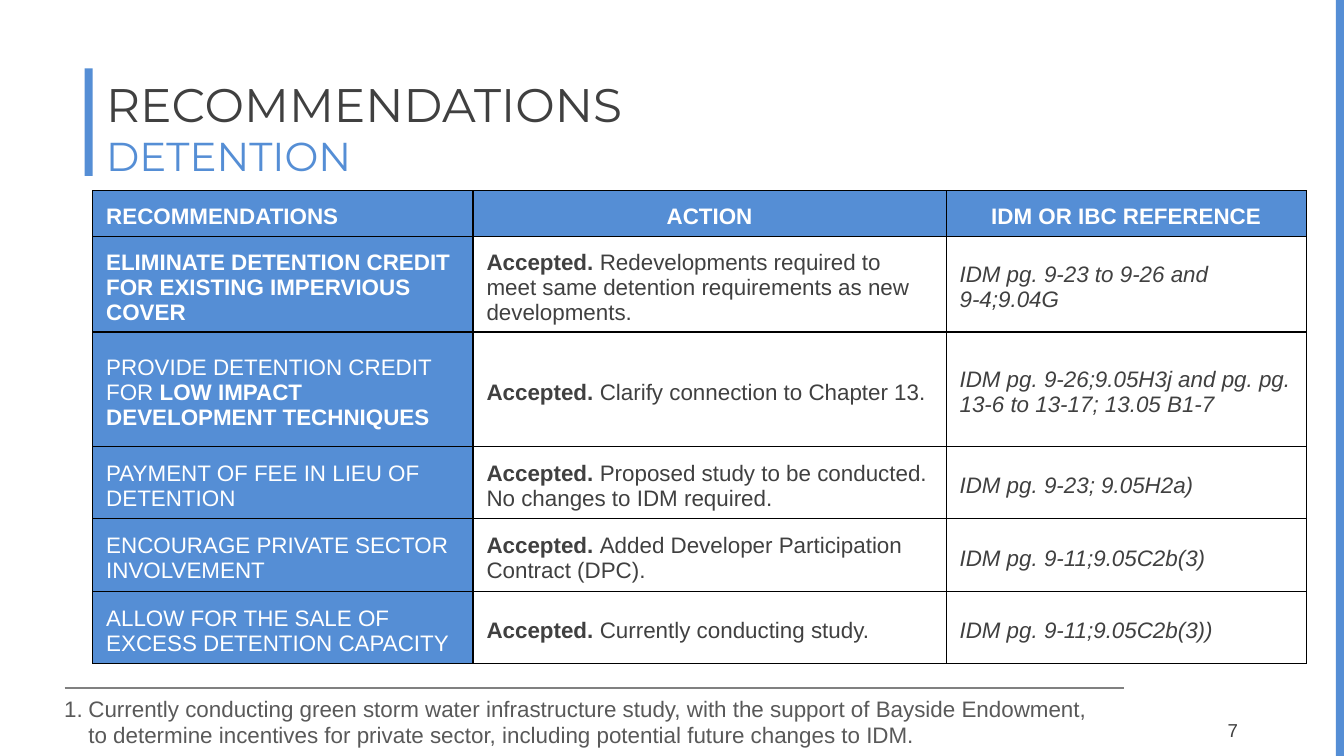
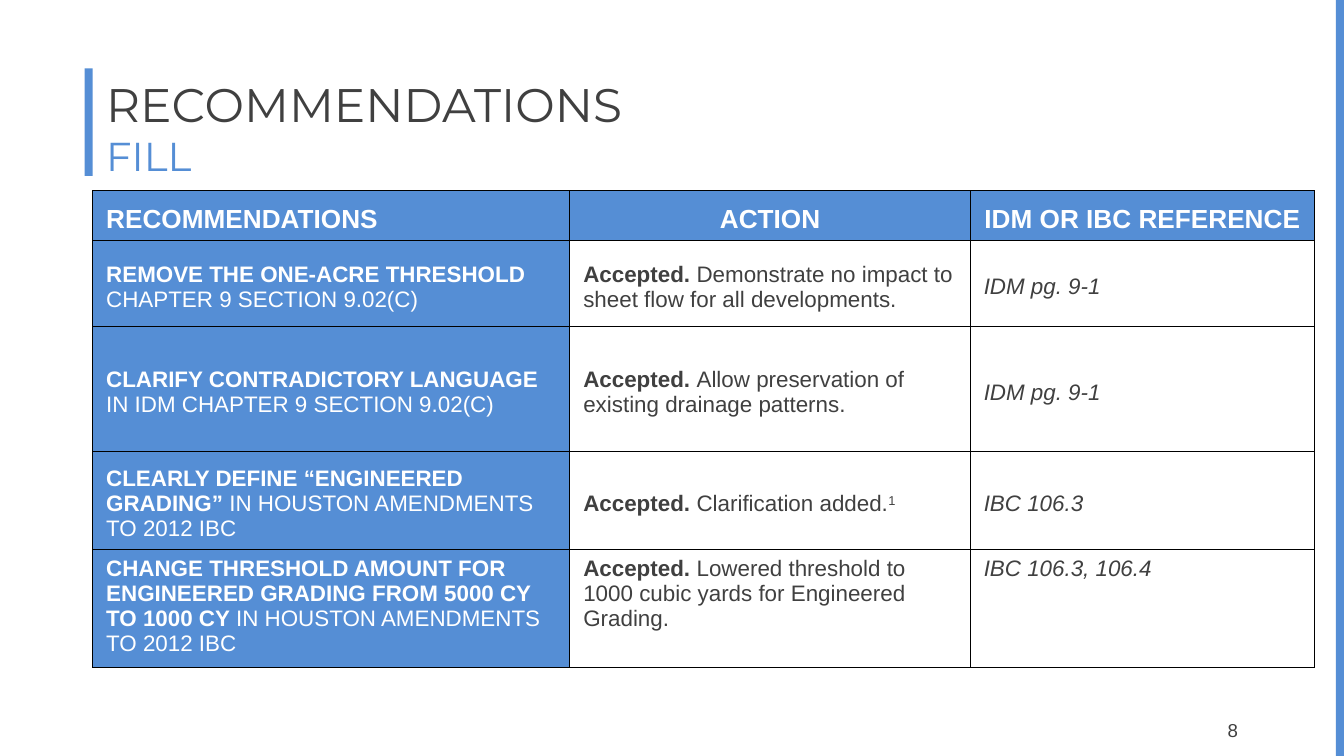
from lxml.etree import SubElement
from pptx import Presentation
from pptx.dml.color import RGBColor
from pptx.enum.shapes import MSO_CONNECTOR, MSO_SHAPE
from pptx.enum.text import MSO_ANCHOR, MSO_AUTO_SIZE, PP_ALIGN
from pptx.oxml import parse_xml
from pptx.oxml.ns import nsdecls, qn
from pptx.util import Inches, Pt

HUES = {"blue": "558ED5", "dark": "404040", "note": "595959",
        "rule": "808080", "white": "FFFFFF", "black": "000000"}
WIDE = 10
HIGH = WIDE * 9 / 16
HEADS = ("RECOMMENDATIONS", "ACTION", "IDM OR IBC REFERENCE")
STEM = "*Accepted. *"

# In the texts, * switches bold, ^ switches superscript,
# \n starts a paragraph and \v breaks a line.
SLIDES = [
    {
        "topic": "DETENTION", "page": 7, "head": 12, "top": (),
        "cols": (2.83, 3.52, 2.68),
        "rows": (0.34, 0.66, 0.85, 0.54, 0.54, 0.54),
        "body": [
            ("*ELIMINATE DETENTION CREDIT FOR EXISTING IMPERVIOUS COVER*",
             "Redevelopments required to meet same detention requirements "
             "as new developments.",
             "IDM pg. 9-23 to 9-26 and \v9-4;9.04G"),
            ("PROVIDE DETENTION CREDIT FOR* LOW IMPACT DEVELOPMENT TECHNIQUES*",
             "Clarify connection to Chapter 13.",
             "IDM pg. 9-26;9.05H3j and pg. pg. 13-6 to 13-17; 13.05 B1-7"),
            ("PAYMENT OF FEE IN LIEU OF DETENTION",
             "Proposed study to be conducted.\nNo changes to IDM required.",
             "IDM pg. 9-23; 9.05H2a)"),
            ("ENCOURAGE PRIVATE SECTOR INVOLVEMENT",
             "Added Developer Participation Contract (DPC).",
             "IDM pg. 9-11;9.05C2b(3)"),
            ("ALLOW FOR THE SALE OF EXCESS DETENTION CAPACITY",
             "Currently conducting study.",
             "IDM pg. 9-11;9.05C2b(3))"),
        ],
        "note": "Currently conducting green storm water infrastructure study, "
                "with the support of Bayside Endowment, \vto determine "
                "incentives for private sector, including potential future "
                "changes to IDM.",
    },
    {
        "topic": "FILL", "page": 8, "head": 14, "top": (4,),
        "cols": (3.55, 2.98, 2.56),
        "rows": (0.37, 0.64, 0.93, 0.73, 0.88),
        "body": [
            ("*REMOVE THE ONE-ACRE THRESHOLD *CHAPTER 9 SECTION 9.02(C)",
             "Demonstrate no impact to sheet flow for all developments.",
             "IDM pg. 9-1"),
            ("*CLARIFY CONTRADICTORY LANGUAGE *IN IDM CHAPTER 9 SECTION 9.02(C)",
             "Allow preservation of existing drainage patterns.",
             "IDM pg. 9-1"),
            ("*CLEARLY DEFINE “ENGINEERED GRADING” *IN HOUSTON AMENDMENTS "
             "TO 2012 IBC",
             "Clarification added.^1^",
             "IBC 106.3"),
            ("*CHANGE THRESHOLD AMOUNT FOR ENGINEERED GRADING FROM 5000 CY "
             "TO 1000 CY *IN HOUSTON AMENDMENTS TO 2012 IBC",
             "Lowered threshold to 1000 cubic yards for Engineered Grading.",
             "IBC 106.3, 106.4"),
        ],
        "note": None,
    },
]


def hue(name):
    return RGBColor.from_string(HUES[name])


def box(*at):
    return [Inches(n) for n in at]


def assign(obj, **vals):
    for key, val in vals.items():
        setattr(obj, key, val)


def add_run(para, text, size, tint, font="Arial", bold=False, slant=False):
    run = para.add_run()
    run.text = text
    assign(run.font, name=font, size=Pt(size), bold=bold, italic=slant)
    run.font.color.rgb = hue(tint)
    return run


def write(frame, text, size, tint, slant=False, align=PP_ALIGN.LEFT):
    """Fill a frame with marked-up text."""
    for i, block in enumerate(text.split("\n")):
        para = frame.add_paragraph() if i else frame.paragraphs[0]
        para.alignment = align
        for j, line in enumerate(block.split("\v")):
            if j:
                para.add_line_break()
            for k, span in enumerate(line.split("*")):
                for m, part in enumerate(span.split("^")):
                    if part:
                        run = add_run(para, part, size, tint,
                                      bold=k % 2 == 1, slant=slant)
                        if m % 2:
                            run._r.get_or_add_rPr().set("baseline", "30000")


def add_bar(slide, *at):
    bar = slide.shapes.add_shape(MSO_SHAPE.RECTANGLE, *box(*at))
    bar.shadow.inherit = False
    bar.fill.solid()
    bar.fill.fore_color.rgb = hue("blue")
    bar.line.fill.background()


def add_title(slide, topic):
    title = slide.shapes.title
    left, top, width, height = box(0.69, 0.5, 8.62, 0.79)
    assign(title, left=left, top=top, width=width, height=height)
    frame = title.text_frame
    assign(frame, vertical_anchor=MSO_ANCHOR.TOP, word_wrap=True,
           auto_size=MSO_AUTO_SIZE.NONE, margin_top=Inches(0.08))
    para = frame.paragraphs[0]
    assign(para, alignment=PP_ALIGN.LEFT, line_spacing=0.98)
    add_run(para, "RECOMMENDATIONS", 25.2, "dark", "Montserrat")
    para.add_line_break()
    add_run(para, topic, 21.6, "blue", "Montserrat")


def add_page(slide, page):
    frame = slide.shapes.add_textbox(*box(8.88, 5.36, 0.43, 0.14)).text_frame
    assign(frame, word_wrap=True, vertical_anchor=MSO_ANCHOR.MIDDLE,
           margin_top=0, margin_bottom=0)
    write(frame, str(page), 10, "dark", align=PP_ALIGN.RIGHT)


def add_edges(cell):
    props = cell._tc.get_or_add_tcPr()
    for i, side in enumerate("LRTB"):
        props.insert(i, parse_xml(
            f'<a:ln{side} {nsdecls("a")} w="9525"><a:solidFill>'
            f'<a:srgbClr val="{HUES["black"]}"/></a:solidFill></a:ln{side}>'))


def add_grid(slide, data):
    cols, rows = data["cols"], data["rows"]
    table = slide.shapes.add_table(
        len(rows), len(cols), *box(0.69, 1.42, sum(cols), sum(rows))).table
    table.horz_banding = False
    for col, width in zip(table.columns, cols):
        col.width = Inches(width)
    for row, height in zip(table.rows, rows):
        row.height = Inches(height)
    body = [(name, STEM + act, ref) for name, act, ref in data["body"]]
    heads = tuple(f"*{head}*" for head in HEADS)
    for r, texts in enumerate([heads] + body):
        for c, text in enumerate(texts):
            cell = table.cell(r, c)
            blue = r == 0 or c == 0
            high = r in data["top"]
            assign(cell, margin_left=Inches(0.1), margin_right=Inches(0.1),
                   margin_top=Inches(0.05 if high else 0.1),
                   margin_bottom=Inches(0.05),
                   vertical_anchor=MSO_ANCHOR.TOP if high else MSO_ANCHOR.MIDDLE)
            cell.fill.solid()
            cell.fill.fore_color.rgb = hue("blue" if blue else "white")
            add_edges(cell)
            write(cell.text_frame, text, 12 if r else data["head"],
                  "white" if blue else "dark", slant=r > 0 and c == 2,
                  align=PP_ALIGN.CENTER if r == 0 and c else PP_ALIGN.LEFT)


def add_note(slide, text):
    frame = slide.shapes.add_textbox(*box(0.38, 5.12, 8.2, 0.5)).text_frame
    assign(frame, word_wrap=True, auto_size=MSO_AUTO_SIZE.SHAPE_TO_FIT_TEXT)
    props = frame.paragraphs[0]._p.get_or_add_pPr()
    props.set("marL", str(Inches(0.18)))
    props.set("indent", str(-Inches(0.18)))
    SubElement(props, qn("a:buFont"), typeface="+mj-lt")
    SubElement(props, qn("a:buAutoNum"), type="arabicPeriod")
    write(frame, text, 12, "note")
    rule = slide.shapes.add_connector(MSO_CONNECTOR.STRAIGHT,
                                      *box(0.48, 5.12, 8.36, 5.12))
    rule.line.color.rgb = hue("rule")
    rule.line.width = Pt(0.75)
    SubElement(rule._element.spPr, qn("a:effectLst"))


def main():
    deck = Presentation()
    assign(deck, slide_width=Inches(WIDE), slide_height=Inches(HIGH))
    for data in SLIDES:
        slide = deck.slides.add_slide(deck.slide_layouts[5])
        add_bar(slide, WIDE - 0.06, 0, 0.06, HIGH)
        add_bar(slide, 0.63, 0.51, 0.06, 0.8)
        add_grid(slide, data)
        if data["note"]:
            add_note(slide, data["note"])
        add_title(slide, data["topic"])
        add_page(slide, data["page"])
    deck.save("out.pptx")


if __name__ == "__main__":
    main()
